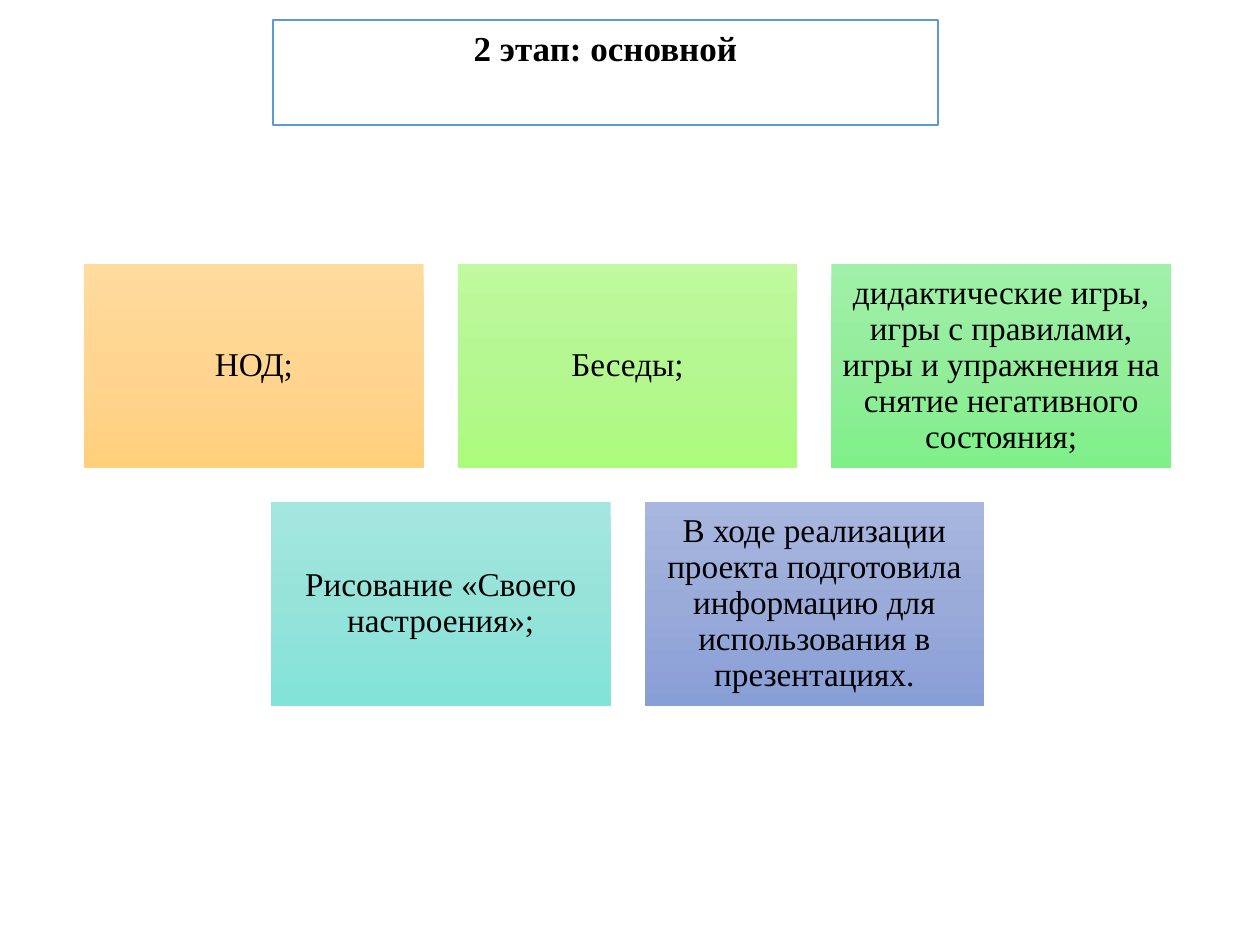
from copy import deepcopy

from pptx import Presentation
from pptx.dml.color import RGBColor
from pptx.enum.shapes import MSO_SHAPE
from pptx.enum.text import MSO_ANCHOR, MSO_AUTO_SIZE, PP_ALIGN
from pptx.util import Pt

CENTER_X, TOP = 358.6, 150.8
CARD_W, CARD_H, GAP = 194.1, 116.5, 19.4
ROWS = [
    [
        ("НОД;", ("FFDB9E", "FFD590", "FFD07C")),
        ("Беседы;", ("C0F99F", "B5F791", "ABFB7D")),
        ("дидактические игры, игры с правилами, игры и упражнения на снятие "
         "негативного состояния;", ("A1F0A9", "93ED9B", "7FEF89")),
    ],
    [
        ("Рисование «Своего настроения»;", ("A4E7E0", "96E3DA", "82E3D9")),
        ("В ходе реализации проекта подготовила информацию для использования "
         "в презентациях.", ("A8B7DF", "9AABD9", "889ED7")),
    ],
]


def rgb(value):
    return RGBColor.from_string(value)


def write(tf, text, size=19, bold=False, font="Times New Roman",
          color="000000", spacing=1.0, anchor=MSO_ANCHOR.MIDDLE):
    tf.word_wrap = True
    tf.vertical_anchor = anchor
    p = tf.paragraphs[0]
    p.alignment = PP_ALIGN.CENTER
    p.line_spacing = spacing
    r = p.add_run()
    r.text = text
    r.font.name = font
    r.font.size = Pt(size)
    r.font.bold = bold
    r.font.color.rgb = rgb(color)


class Deck:
    """Holds the presentation style and the current slide."""

    accent = "5B9BD5"
    inset = 5.7

    def __init__(self, prs):
        self.s = prs.slides.add_slide(prs.slide_layouts[5])

    def title(self, text, x, y, w, h):
        sp = self.s.shapes.title
        sp.left, sp.top, sp.width, sp.height = Pt(x), Pt(y), Pt(w), Pt(h)
        sp.fill.solid()
        sp.fill.fore_color.rgb = rgb("FFFFFF")
        sp.line.color.rgb = rgb(self.accent)
        sp.line.width = Pt(1)
        write(sp.text_frame, text, size=20, bold=True, anchor=MSO_ANCHOR.TOP)
        sp.text_frame.auto_size = MSO_AUTO_SIZE.SHAPE_TO_FIT_TEXT

    def gradient(self, sp, colors):
        sp.fill.gradient()
        sp.fill.gradient_angle = 270
        first = sp._element.xpath(".//a:gs")[0]
        first.addnext(deepcopy(first))
        for stop, color, position in zip(sp.fill.gradient_stops, colors, (0, 0.5, 1)):
            stop.color.rgb = rgb(color)
            stop.position = position

    def card(self, text, colors, x, y):
        sp = self.s.shapes.add_shape(
            MSO_SHAPE.RECTANGLE, Pt(x), Pt(y), Pt(CARD_W), Pt(CARD_H))
        sp.shadow.inherit = False
        sp.line.fill.background()
        self.gradient(sp, colors)
        tf = sp.text_frame
        tf.margin_left = tf.margin_right = Pt(self.inset)
        tf.margin_top = tf.margin_bottom = Pt(self.inset)
        write(tf, text, spacing=0.9)


def main():
    prs = Presentation()
    prs.slide_width, prs.slide_height = Pt(720), Pt(540)
    deck = Deck(prs)
    deck.title("2 этап: основной", 156, 11.5, 380, 31.7)
    for i, row in enumerate(ROWS):
        left = CENTER_X - (len(row) * (CARD_W + GAP) - GAP) / 2
        for j, (text, colors) in enumerate(row):
            deck.card(text, colors, left + j * (CARD_W + GAP), TOP + i * (CARD_H + GAP))
    prs.save("out.pptx")


if __name__ == "__main__":
    main()
